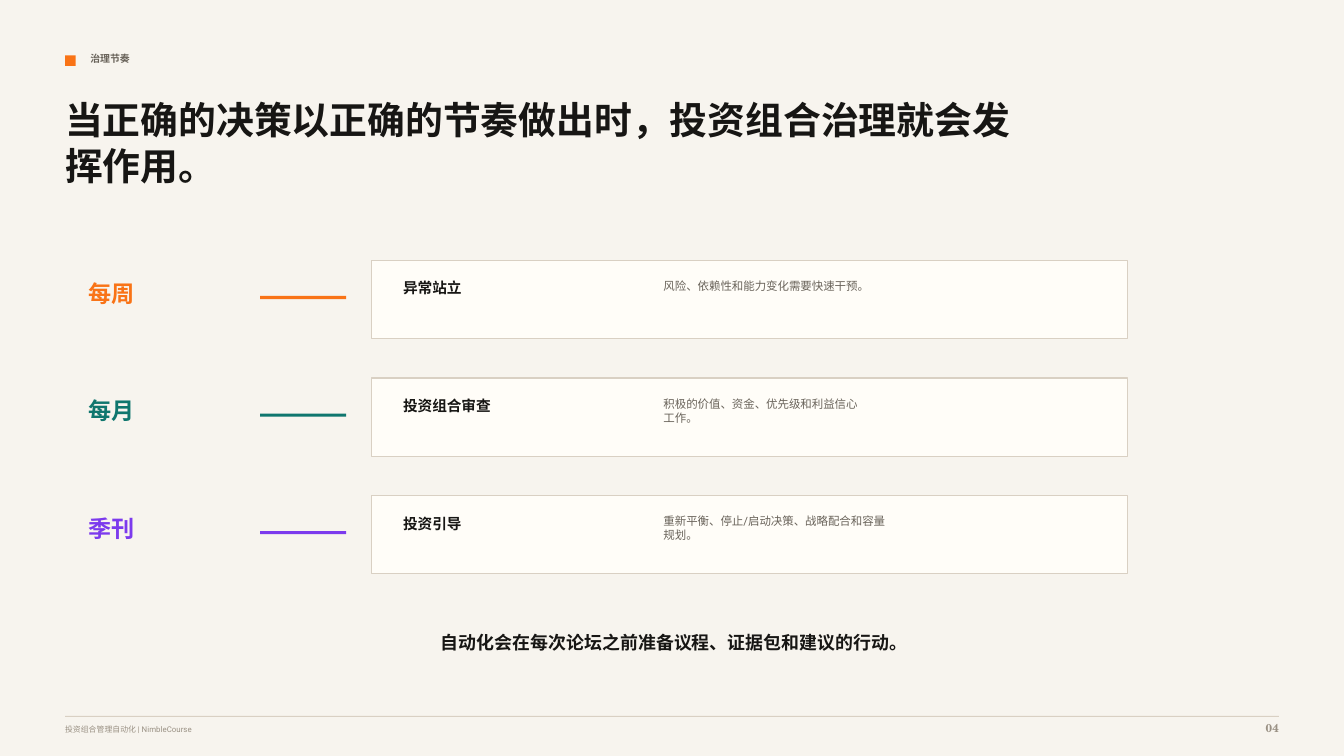
from pptx import Presentation
from pptx.dml.color import RGBColor
from pptx.enum.shapes import MSO_SHAPE as Shape
from pptx.enum.text import MSO_ANCHOR as Anchor, MSO_AUTO_SIZE as AutoSize, PP_ALIGN as Align
from pptx.util import Pt

CREAM = RGBColor(0xF7, 0xF4, 0xEE)
CARD = RGBColor(0xFF, 0xFD, 0xF8)
RULE = RGBColor(0xD9, 0xD0, 0xC3)
INK = RGBColor(0x17, 0x16, 0x14)
GREY = RGBColor(0x69, 0x63, 0x5A)
PALE = RGBColor(0x9A, 0x91, 0x84)
ORANGE = RGBColor(0xF9, 0x73, 0x16)
TEAL = RGBColor(0x0F, 0x76, 0x6E)
VIOLET = RGBColor(0x7C, 0x3A, 0xED)
SANS, SERIF = "Roboto", "TeX Gyre Schola"

RHYTHM = [
    ("每周", ORANGE, "异常站立", "风险、依赖性和能力变化需要快速干预。"),
    ("每月", TEAL, "投资组合审查", "积极的价值、资金、优先级和利益信心\n工作。"),
    ("季刊", VIOLET, "投资引导", "重新平衡、停止/启动决策、战略配合和容量\n规划。"),
]
ROW_PITCH = 84


def write(sp, text, size, color, font=SANS, bold=False, align=Align.LEFT):
    tf = sp.text_frame
    tf.text = text
    tf.word_wrap = True
    tf.auto_size = AutoSize.NONE
    tf.vertical_anchor = Anchor.TOP
    tf.margin_left = tf.margin_top = tf.margin_right = tf.margin_bottom = 0
    for p in tf.paragraphs:
        p.alignment = align
        p.font.size, p.font.name, p.font.bold = Pt(size), font, bold
        p.font.color.rgb = color


def add_text(s, x, y, w, h, *args, **style):
    write(s.shapes.add_textbox(Pt(x), Pt(y), Pt(w), Pt(h)), *args, **style)


def add_rect(s, x, y, w, h, fill, line=None):
    sp = s.shapes.add_shape(Shape.RECTANGLE, Pt(x), Pt(y), Pt(w), Pt(h))
    sp.shadow.inherit = False
    sp.fill.solid()
    sp.fill.fore_color.rgb = fill
    if line is None:
        sp.line.fill.background()
    else:
        sp.line.color.rgb = line
        sp.line.width = Pt(0.75)


def add_header(s, x, y, w):
    # Section marker and label
    add_rect(s, x, y + 2.2, 7.5, 7.5, ORANGE)
    add_text(s, x + 18, y, 420, 13.5, "治理节奏", 7.1, GREY, bold=True)
    # Title
    title = s.shapes.title
    title.left, title.top, title.width, title.height = Pt(x), Pt(y + 31.75), Pt(w), Pt(73.5)
    write(title, "当正确的决策以正确的节奏做出时，投资组合治理就会发挥作用。",
          27, INK, font=SERIF, bold=True)


def add_rhythm_row(s, x, y, period, color, forum, focus):
    # Period and its coloured dash
    add_text(s, x, y + 13.5, 106.5, 21, period, 16.5, color, font=SERIF, bold=True)
    add_rect(s, x + 122.6, y + 25.4, 61.5, 2.25, color)
    # Forum card
    add_rect(s, x + 202.5, y, 540, 55.75, CARD, RULE)
    add_text(s, x + 224.75, y + 13.5, 165, 13.5, forum, 10.5, INK, bold=True)
    add_text(s, x + 410.75, y + 13.5, 262.5, 27, focus, 8.2, GREY)


def add_footer(s, x, y, w):
    add_rect(s, x, y, w, 0.75, RULE)
    add_text(s, x, y + 6.5, 570, 10.5, "投资组合管理自动化 | NimbleCourse", 5.6, PALE)
    add_text(s, x + w - 36, y + 3.6, 36, 13.5, "04", 8.2, PALE,
             font=SERIF, bold=True, align=Align.RIGHT)


def main():
    prs = Presentation()
    prs.slide_width, prs.slide_height = Pt(960), Pt(540)
    s = prs.slides.add_slide(prs.slide_layouts[5])
    s.background.fill.solid()
    s.background.fill.fore_color.rgb = CREAM

    add_header(s, 46.5, 37.4, 675)
    for i, row in enumerate(RHYTHM):
        add_rhythm_row(s, 63.2, 186 + i * ROW_PITCH, *row)
    # Closing statement
    add_text(s, 159, 451.4, 645, 19.5, "自动化会在每次论坛之前准备议程、证据包和建议的行动。",
             12.8, INK, font=SERIF, bold=True, align=Align.CENTER)
    add_footer(s, 46.5, 511.4, 867)

    prs.save("out.pptx")


if __name__ == "__main__":
    main()
